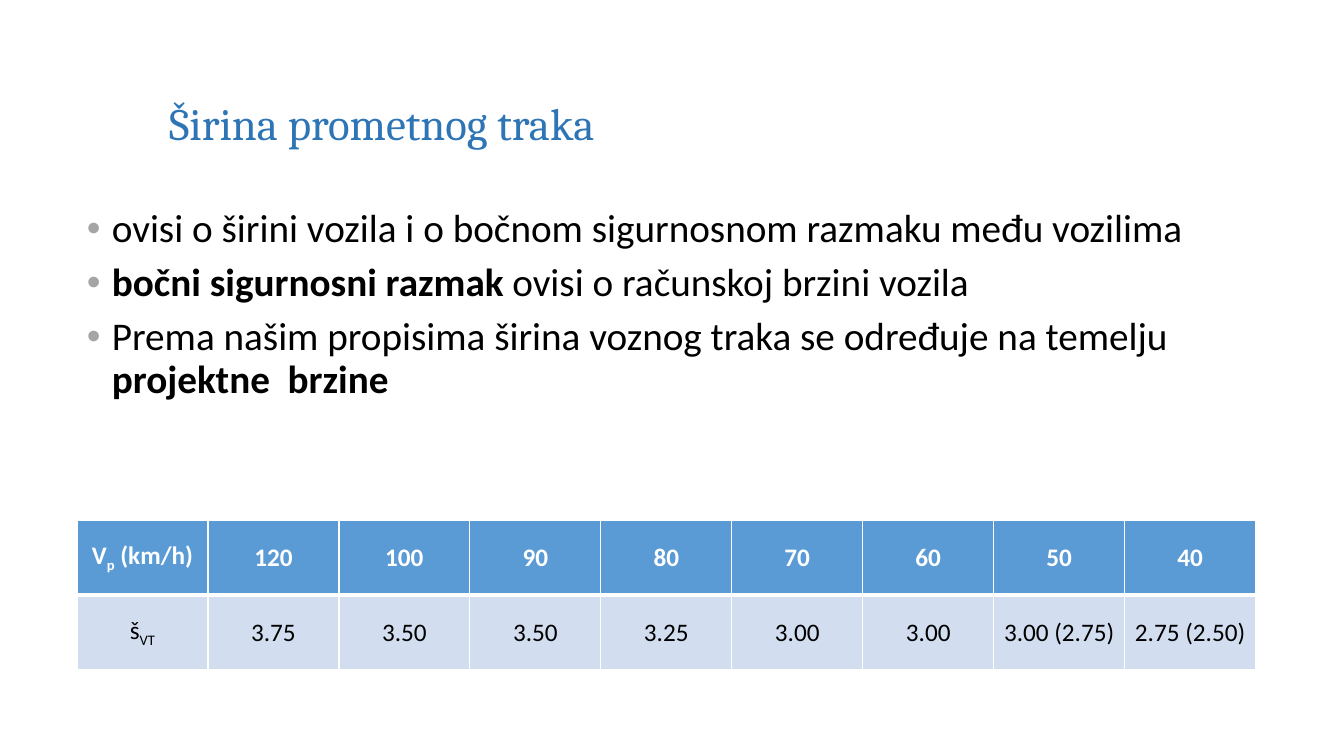
from lxml.etree import SubElement
from pptx import Presentation
from pptx.dml.color import RGBColor
from pptx.enum.text import MSO_ANCHOR, MSO_AUTO_SIZE, PP_ALIGN
from pptx.oxml.ns import qn
from pptx.util import Pt

EMU_PER_INCH, PX_PER_INCH = 914400, 100.8
COLORS = {
    "title": "2E75B6",
    "text": "000000",
    "bullet": "A5A5A5",
    "header": "5B9BD5",
    "row": "D2DEEF",
    "white": "FFFFFF",
}
BULLETS = [
    [("ovisi o širini vozila i o bočnom sigurnosnom razmaku među vozilima", False)],
    [("bočni sigurnosni razmak ", True), ("ovisi o računskoj brzini vozila", False)],
    [("Prema našim propisima širina voznog traka se određuje na temelju ", False),
     ("projektne  brzine", True)],
]
# Each cell is a list of (text, is_subscript) pieces
SPEEDS = [[("V", False), ("p", True), (" (km/h)", False)]] + [
    [(str(v), False)] for v in (120, 100, 90, 80, 70, 60, 50, 40)]
WIDTHS = [[("š", False), ("VT", True)]] + [
    [(w, False)] for w in ("3.75", "3.50", "3.50", "3.25", "3.00", "3.00",
                           "3.00 (2.75)", "2.75 (2.50)")]
COL_W, ROW_H = 131, 75


def px(n):
    return round(n * EMU_PER_INCH / PX_PER_INCH)


def rgb(name):
    return RGBColor.from_string(COLORS[name])


def add_run(p, text, size, color, bold=False, font="Calibri"):
    r = p.add_run()
    r.text = text
    r.font.name, r.font.size, r.font.bold = font, Pt(size), bold
    r.font.color.rgb = rgb(color)
    return r


def set_title(s, text, x, y, w, h):
    sp = s.shapes.title
    sp.left, sp.top, sp.width, sp.height = px(x), px(y), px(w), px(h)
    tf = sp.text_frame
    tf.auto_size = MSO_AUTO_SIZE.NONE
    tf.vertical_anchor = MSO_ANCHOR.MIDDLE
    p = tf.paragraphs[0]
    p.alignment = PP_ALIGN.LEFT
    p.line_spacing = 0.9
    add_run(p, text, 32, "title", font="Cambria")


def set_bullet(p, indent):
    pPr = p._p.get_or_add_pPr()
    pPr.set("marL", str(px(indent)))
    pPr.set("indent", str(-px(indent)))
    SubElement(SubElement(pPr, qn("a:buClr")), qn("a:srgbClr"), val=COLORS["bullet"])
    SubElement(pPr, qn("a:buFont"), typeface="Arial")
    SubElement(pPr, qn("a:buChar"), char="•")


def add_bullets(s, items, x, y, w, h):
    tf = s.shapes.add_textbox(px(x), px(y), px(w), px(h)).text_frame
    tf.word_wrap = True
    for i, pieces in enumerate(items):
        p = tf.add_paragraph() if i else tf.paragraphs[0]
        set_bullet(p, 25)
        p.line_spacing = 0.9
        p.space_before = Pt(8.4 if i else 0)
        for text, bold in pieces:
            add_run(p, text, 28, "text", bold)


def set_borders(cell, top, bottom):
    tcPr = cell._tc.get_or_add_tcPr()
    for side, width in (("L", 1), ("R", 1), ("T", top), ("B", bottom)):
        ln = SubElement(tcPr, qn(f"a:ln{side}"), w=str(Pt(width)))
        SubElement(SubElement(ln, qn("a:solidFill")), qn("a:srgbClr"), val=COLORS["white"])


def fill_cell(cell, pieces, is_header):
    set_borders(cell, 1 if is_header else 3, 3 if is_header else 1)
    cell.fill.solid()
    cell.fill.fore_color.rgb = rgb("header" if is_header else "row")
    cell.vertical_anchor = MSO_ANCHOR.MIDDLE
    cell.margin_left = cell.margin_right = px(5)
    p = cell.text_frame.paragraphs[0]
    p.alignment = PP_ALIGN.CENTER
    for text, subscript in pieces:
        r = add_run(p, text, 18, "white" if is_header else "text", is_header)
        if subscript:
            r.font._element.set("baseline", "-25000")


def add_speed_table(s, rows, x, y):
    cols = len(rows[0])
    table = s.shapes.add_table(len(rows), cols, px(x), px(y),
                               px(COL_W * cols), px(ROW_H * len(rows))).table
    for col in table.columns:
        col.width = px(COL_W)
    for i, row in enumerate(rows):
        table.rows[i].height = px(ROW_H)
        for j, pieces in enumerate(row):
            fill_cell(table.cell(i, j), pieces, i == 0)


def main():
    prs = Presentation()
    prs.slide_width, prs.slide_height = px(1344), px(756)
    s = prs.slides.add_slide(prs.slide_layouts[5])

    # Title and key points
    set_title(s, "Širina prometnog traka", 159, 97, 774, 57)
    add_bullets(s, BULLETS, 77, 204, 1204, 439)

    # Lane width by design speed
    add_speed_table(s, [SPEEDS, WIDTHS], 77, 520)

    prs.save("out.pptx")


if __name__ == "__main__":
    main()
